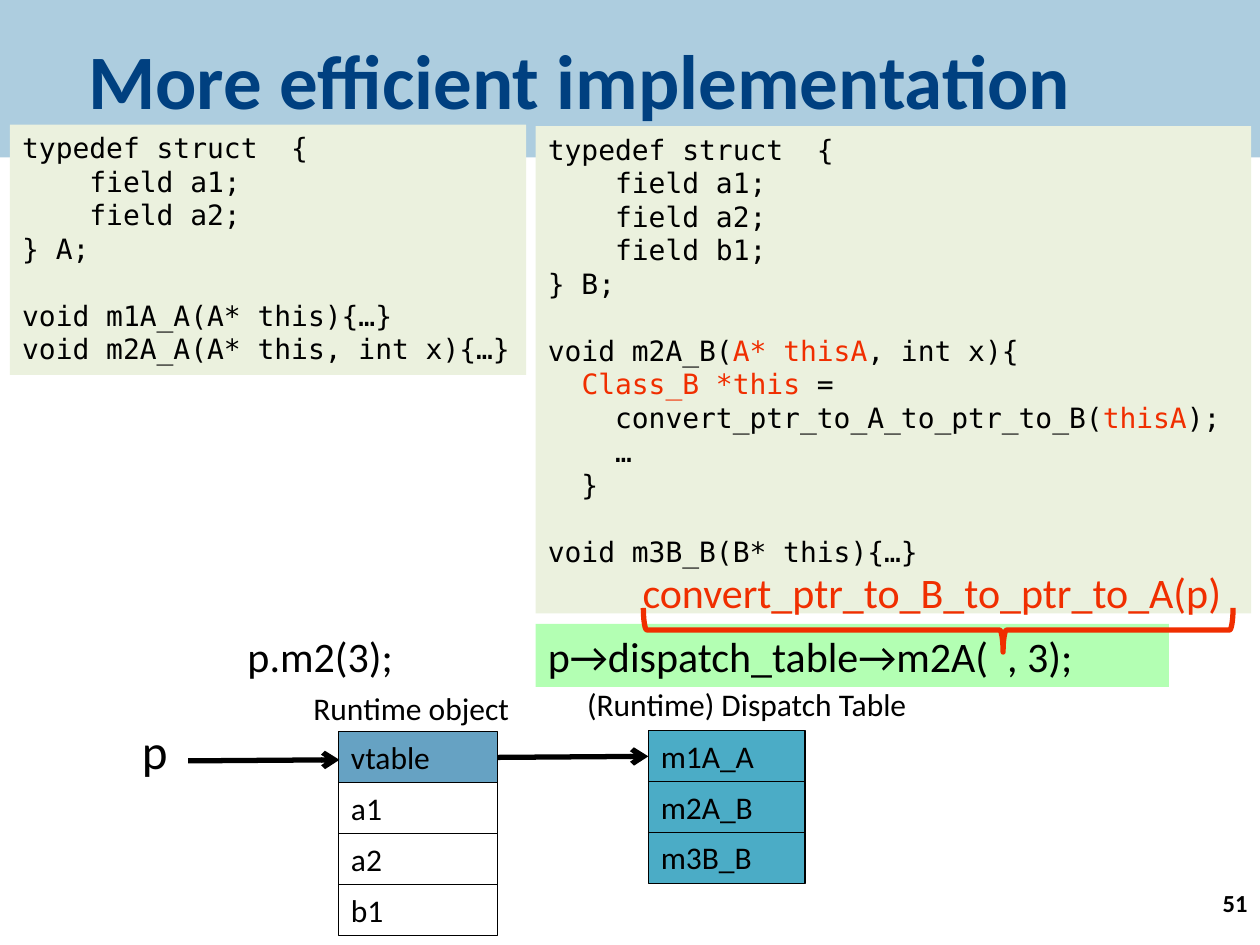
import pptx
import pptx.util
import pptx.dml.color
import pptx.enum.shapes
import pptx.enum.text
import pptx.oxml.ns
from lxml import etree

Pt = pptx.util.Pt
RGB = pptx.dml.color.RGBColor
SHAPE = pptx.enum.shapes.MSO_SHAPE
ALIGN = pptx.enum.text.PP_ALIGN
ANCHOR = pptx.enum.text.MSO_ANCHOR
qn = pptx.oxml.ns.qn

BLACK = RGB(0x00, 0x00, 0x00)
WHITE = RGB(0xFF, 0xFF, 0xFF)
NAVY = RGB(0x00, 0x40, 0x80)
BAND = RGB(0xAD, 0xCD, 0xDF)
CODE_FILL = RGB(0xEB, 0xF1, 0xDE)
GREEN = RGB(0xB3, 0xFF, 0xB3)
BLUE = RGB(0x66, 0xA2, 0xC3)
TEAL = RGB(0x4B, 0xAC, 0xC6)
RED = RGB(0xF0, 0x2E, 0x00)
SANS, MONO = "Calibri", "DejaVu Sans Mono"
LINE_GAP = 19

prs = pptx.Presentation()
prs.slide_width, prs.slide_height = Pt(720), Pt(540)
s = prs.slides.add_slide(prs.slide_layouts[5])


def add_box(x, y, w, h, text, size, font=SANS, fill=None, line=None,
            align=ALIGN.LEFT, color=BLACK, bold=False):
    """Text in a box; parts between bars are red, an empty line is a gap."""
    if fill is None and line is None:
        sp = s.shapes.add_textbox(Pt(x), Pt(y), Pt(w), Pt(h))
    else:
        sp = s.shapes.add_shape(SHAPE.RECTANGLE, Pt(x), Pt(y), Pt(w), Pt(h))
        sp.shadow.inherit = False
        if fill is None:
            sp.fill.background()
        else:
            sp.fill.solid()
            sp.fill.fore_color.rgb = fill
        if line is None:
            sp.line.fill.background()
        else:
            sp.line.color.rgb = line
            sp.line.width = Pt(0.75)
    tf = sp.text_frame
    tf.word_wrap = True
    tf.vertical_anchor = ANCHOR.TOP
    p, gap = None, 0
    for row in text.split("\n"):
        if not row:
            gap = LINE_GAP
            continue
        p = tf.paragraphs[0] if p is None else tf.add_paragraph()
        p.alignment = align
        p.space_before = Pt(gap)
        gap = 0
        for i, part in enumerate(row.split("|")):
            if part:
                r = p.add_run()
                r.text = part
                r.font.name, r.font.size, r.font.bold = font, Pt(size), bold
                r.font.color.rgb = RED if i % 2 else color


def add_arrow(x1, y1, x2, y2):
    c = s.shapes.add_connector(pptx.enum.shapes.MSO_CONNECTOR.STRAIGHT,
                               Pt(x1), Pt(y1), Pt(x2), Pt(y2))
    c.line.color.rgb = BLACK
    c.line.width = Pt(3)
    etree.SubElement(c.line._get_or_add_ln(), qn("a:tailEnd"), type="arrow")
    etree.SubElement(c._element.spPr, qn("a:effectLst"))


# Title band
title = s.shapes.title
title.left, title.top, title.width, title.height = Pt(0), Pt(0), Pt(720), Pt(90)
title.fill.solid()
title.fill.fore_color.rgb = BAND
tf = title.text_frame
tf.text = "More efficient implementation"
tf.auto_size = pptx.enum.text.MSO_AUTO_SIZE.NONE
tf.vertical_anchor = ANCHOR.MIDDLE
tf.margin_left = Pt(50.4)
p = tf.paragraphs[0]
p.alignment = ALIGN.LEFT
f = p.runs[0].font
f.name, f.size, f.bold = SANS, Pt(44), True
f.color.rgb = NAVY

# Slide number
add_box(570, 504, 150, 36, "51", 14, align=ALIGN.RIGHT, bold=True)

# Code of both classes
CODE_A = """typedef struct  {
    field a1;
    field a2;
} A;

void m1A_A(A* this){…}
void m2A_A(A* this, int x){…}"""
CODE_B = """typedef struct  {
    field a1;
    field a2;
    field b1;
} B;

void m2A_B(|A* thisA|, int x){
  |Class_B *this |=
    convert_ptr_to_A_to_ptr_to_B(|thisA|);
    …
  }

void m3B_B(B* this){…}"""
add_box(5.6, 71.2, 295, 143, CODE_A, 16, MONO, CODE_FILL)
add_box(306, 72, 409, 278.5, CODE_B, 16, MONO, CODE_FILL)

# The call and its translation
add_box(119, 356.5, 128, 36, "p.m2(3);", 24, fill=WHITE, align=ALIGN.CENTER)
add_box(306, 356.5, 362, 36, "p→dispatch_table→m2A(  , 3);", 24, fill=GREEN)
add_box(357, 320, 351, 36, "convert_ptr_to_B_to_ptr_to_A(p)", 24,
        align=ALIGN.CENTER, color=RED)
brace = s.shapes.add_shape(SHAPE.RIGHT_BRACE, Pt(523.5), Pt(191.5), Pt(25.2), Pt(337))
brace.rotation = 90
brace.adjustments[0], brace.adjustments[1] = 0.08, 0.39
brace.shadow.inherit = False
brace.fill.background()
brace.line.color.rgb = RED
brace.line.width = Pt(3)

# Runtime object and dispatch table
add_box(172, 390, 139, 29, "Runtime object", 18)
add_box(299, 388, 255.5, 29, "(Runtime) Dispatch Table", 18, align=ALIGN.CENTER)
ROW = 29.1
for i, name in enumerate(["vtable", "a1", "a2", "b1"]):
    add_box(193.5, 418.2 + i * ROW, 91, ROW, name, 18,
            fill=None if i else BLUE, line=BLACK)
for i, name in enumerate(["m1A_A", "m2A_B", "m3B_B"]):
    add_box(370.5, 417.4 + i * ROW, 89.5, ROW, name, 18, fill=TEAL, line=BLACK)

# Pointers
add_box(74, 408, 39, 30, "p", 28)
add_arrow(107.5, 434.8, 194, 434.2)
add_arrow(284.5, 432.8, 370.5, 432.2)

prs.save("out.pptx")
